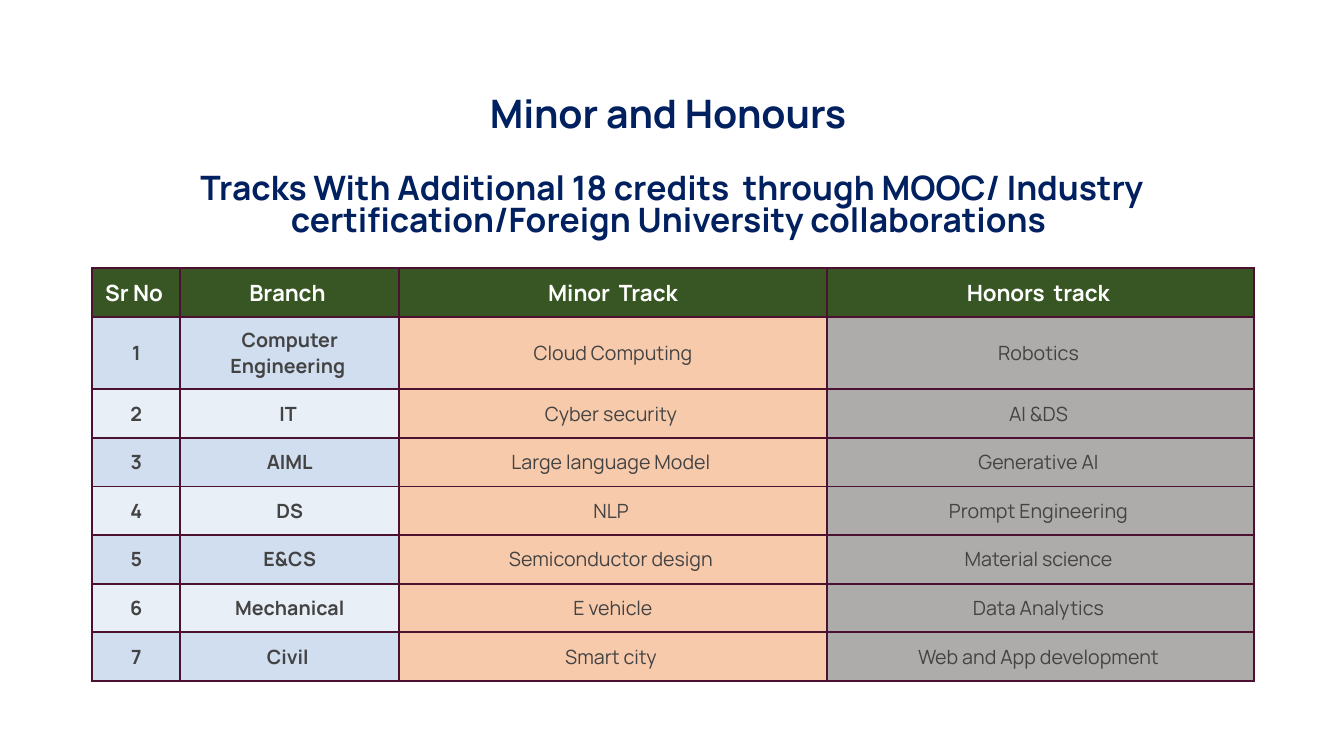
from dataclasses import dataclass

from lxml.etree import SubElement
from pptx import Presentation
from pptx.dml.color import RGBColor
from pptx.enum.text import MSO_ANCHOR as Anchor, MSO_AUTO_SIZE as AutoSize, PP_ALIGN as Align
from pptx.oxml.ns import qn
from pptx.util import Pt

HEADING = "Minor and Honours "
SUBHEADING = ("Tracks With Additional 18 credits  through MOOC/ Industry "
              "certification/Foreign University collaborations ")
COLUMNS = ("Sr No ", "Branch ", "Minor  Track", "Honors  track ")
TRACKS = [
    ("Computer Engineering ", "Cloud Computing", "Robotics "),
    ("IT ", "Cyber security ", "AI &DS "),
    ("AIML", "Large language Model ", "Generative AI "),
    ("DS", "NLP ", "Prompt Engineering "),
    ("E&CS", "Semiconductor design ", "Material science "),
    ("Mechanical", "E vehicle", "Data Analytics "),
    ("Civil ", "Smart city ", "Web and App development "),
]


@dataclass(frozen=True)
class Theme:
    font: str = "Manrope"
    navy: str = "002060"
    white: str = "FFFFFF"
    text: str = "434343"
    header: str = "385623"
    bands: tuple = ("D0DEEF", "E9EFF7")
    minor: str = "F7CAAC"
    honors: str = "AEABAB"
    border: str = "4C1130"
    border_width: float = 1.5
    heading_size: int = 28
    subheading_size: int = 24
    header_size: int = 16
    body_size: int = 14


THEME = Theme()
SLIDE_SIZE = (960, 540)
TITLE_BOX = (92.2, 62.6, 775.4, 115.9)
TABLE_CORNER = (66, 191.5)
COLUMN_WIDTHS = (62.8, 156.4, 305.4, 305.4)
ROW_HEIGHT, TALL_ROW_HEIGHT = 34.75, 51.8


def style(paragraph, size, color, bold):
    paragraph.alignment = Align.CENTER
    font = paragraph.font
    font.name, font.size, font.bold = THEME.font, Pt(size), bold
    font.color.rgb = RGBColor.from_string(color)


def add_borders(cell):
    """Outline all four sides; the lines must precede the fill in the XML."""
    properties = cell._tc.get_or_add_tcPr()
    for side in ("a:lnL", "a:lnR", "a:lnT", "a:lnB"):
        line = SubElement(properties, qn(side), w=str(Pt(THEME.border_width)))
        fill = SubElement(line, qn("a:solidFill"))
        SubElement(fill, qn("a:srgbClr"), val=THEME.border)


def fill_cell(cell, words, size, color, bold, background):
    add_borders(cell)
    cell.fill.solid()
    cell.fill.fore_color.rgb = RGBColor.from_string(background)
    cell.vertical_anchor = Anchor.MIDDLE
    cell.text = words
    style(cell.text_frame.paragraphs[0], size, color, bold)


def add_title(slide):
    title = slide.shapes.title
    title.left, title.top, title.width, title.height = map(Pt, TITLE_BOX)
    frame = title.text_frame
    frame.auto_size = AutoSize.NONE
    frame.word_wrap = True
    frame.vertical_anchor = Anchor.MIDDLE
    heading, subheading = frame.paragraphs[0], frame.add_paragraph()
    heading.text, subheading.text = HEADING, SUBHEADING
    for paragraph, size, gap in ((heading, THEME.heading_size, 0),
                                 (subheading, THEME.subheading_size, 27)):
        paragraph.line_spacing = 0.8
        paragraph.space_before = Pt(gap)
        style(paragraph, size, THEME.navy, True)


def add_tracks(slide):
    heights = [ROW_HEIGHT, TALL_ROW_HEIGHT] + [ROW_HEIGHT] * (len(TRACKS) - 1)
    table = slide.shapes.add_table(
        len(heights), len(COLUMNS), *map(Pt, TABLE_CORNER),
        Pt(sum(COLUMN_WIDTHS)), Pt(sum(heights))).table
    for column, width in zip(table.columns, COLUMN_WIDTHS):
        column.width = Pt(width)
    for row, height in zip(table.rows, heights):
        row.height = Pt(height)

    for column, label in enumerate(COLUMNS):
        fill_cell(table.cell(0, column), label, THEME.header_size, THEME.white, True, THEME.header)
    for number, track in enumerate(TRACKS, 1):
        band = THEME.bands[(number - 1) % 2]
        backgrounds = (band, band, THEME.minor, THEME.honors)
        for column, (words, background) in enumerate(zip((str(number), *track), backgrounds)):
            fill_cell(table.cell(number, column), words, THEME.body_size, THEME.text,
                      column < 2, background)


def main():
    deck = Presentation()
    deck.slide_width, deck.slide_height = map(Pt, SLIDE_SIZE)
    slide = deck.slides.add_slide(deck.slide_layouts[5])
    add_title(slide)
    add_tracks(slide)
    deck.save("out.pptx")


if __name__ == "__main__":
    main()
